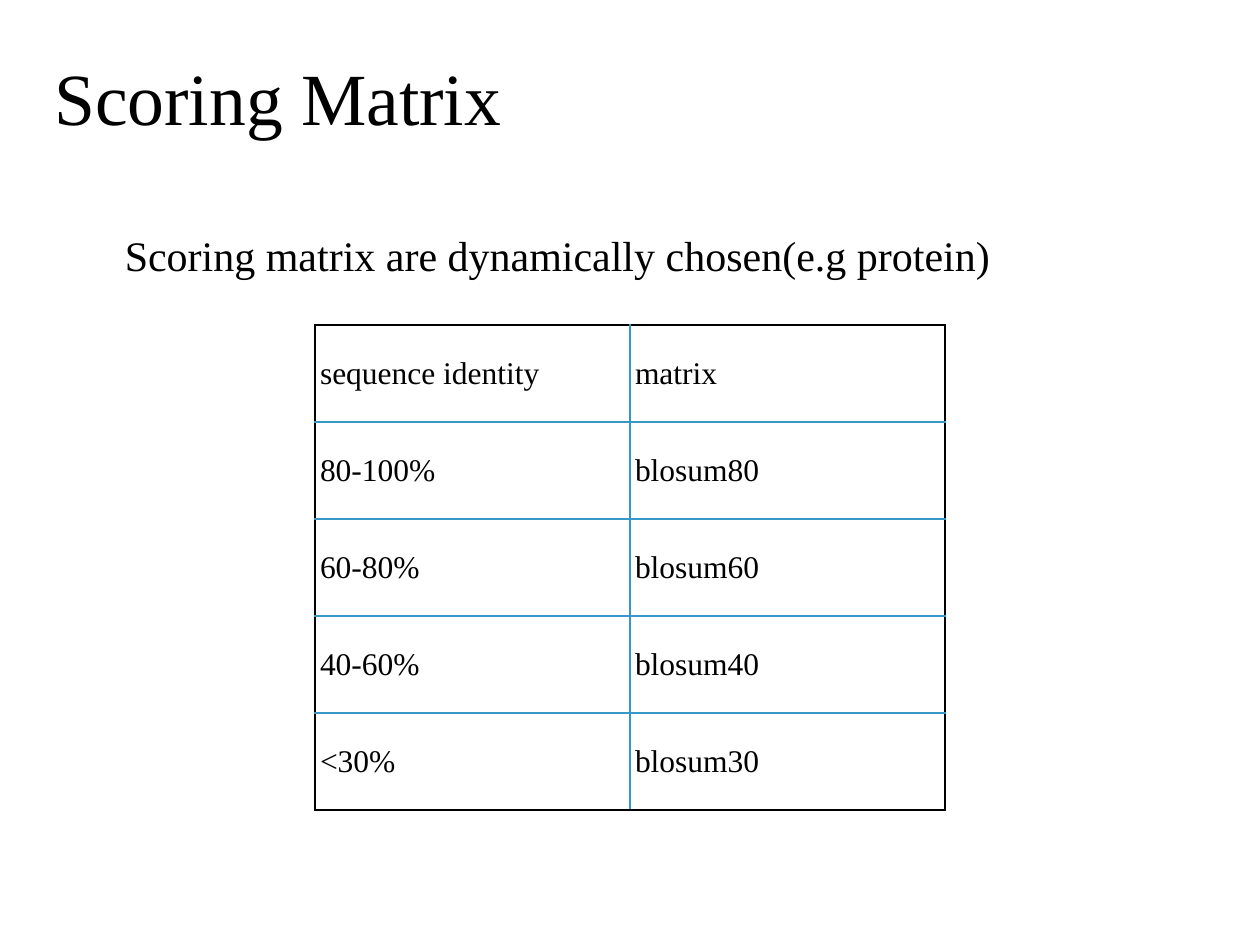
from lxml import etree
from pptx import Presentation
from pptx.dml.color import RGBColor
from pptx.enum.text import MSO_ANCHOR, MSO_AUTO_SIZE, PP_ALIGN
from pptx.oxml.ns import qn
from pptx.util import Inches, Pt

LEFT = PP_ALIGN.LEFT
MIDDLE = MSO_ANCHOR.MIDDLE
NO_AUTOFIT = MSO_AUTO_SIZE.NONE

BLACK = RGBColor(0x00, 0x00, 0x00)
BLUE = RGBColor(0x37, 0x97, 0xC6)
FONT = "Times New Roman"
MARGIN = Inches(0.04)

ROWS = [
    ("sequence identity", "matrix"),
    ("80-100%", "blosum80"),
    ("60-80%", "blosum60"),
    ("40-60%", "blosum40"),
    ("<30%", "blosum30"),
]


def format_paragraph(paragraph, size):
    paragraph.alignment = LEFT
    paragraph.font.name = FONT
    paragraph.font.size = Pt(size)
    paragraph.font.color.rgb = BLACK


def set_margins(target):
    target.margin_left = target.margin_right = MARGIN
    target.margin_top = target.margin_bottom = MARGIN


def fill_placeholder(shape, text, size, left, top, width, height):
    shape.left, shape.top = Inches(left), Inches(top)
    shape.width, shape.height = Inches(width), Inches(height)
    frame = shape.text_frame
    frame.text = text
    frame.word_wrap = False
    frame.auto_size = NO_AUTOFIT
    frame.vertical_anchor = MIDDLE
    set_margins(frame)
    paragraph = frame.paragraphs[0]
    format_paragraph(paragraph, size)
    paragraph.space_before = Pt(0)
    return paragraph


def remove_bullet(paragraph):
    properties = paragraph._p.get_or_add_pPr()
    properties.set("marL", "0")
    properties.set("indent", "0")
    etree.SubElement(properties, qn("a:buNone"))


def add_border(cell, side, color):
    line = etree.SubElement(cell._tc.get_or_add_tcPr(), qn(f"a:ln{side}"), w=str(Pt(1)))
    fill = etree.SubElement(line, qn("a:solidFill"))
    etree.SubElement(fill, qn("a:srgbClr"), val=str(color))


def add_matrix_table(slide, left, top, width, height):
    row_count, column_count = len(ROWS), len(ROWS[0])
    table = slide.shapes.add_table(
        row_count, column_count, Inches(left), Inches(top), Inches(width), Inches(height)
    ).table
    table.first_row = table.horz_banding = False
    for i, values in enumerate(ROWS):
        for j, value in enumerate(values):
            cell = table.cell(i, j)
            cell.text = value
            cell.vertical_anchor = MIDDLE
            set_margins(cell)
            format_paragraph(cell.text_frame.paragraphs[0], 18)
            # Black outer frame, blue inner grid
            outer_sides = {
                "L": j == 0,
                "R": j == column_count - 1,
                "T": i == 0,
                "B": i == row_count - 1,
            }
            for side, is_outer in outer_sides.items():
                add_border(cell, side, BLACK if is_outer else BLUE)
            cell.fill.background()


def main():
    presentation = Presentation()
    presentation.slide_width = Inches(10)
    presentation.slide_height = Inches(7.5)
    slide = presentation.slides.add_slide(presentation.slide_layouts[1])

    # Title and statement
    fill_placeholder(slide.shapes.title, "Scoring Matrix", 42, 0.39, 0.37, 3.66, 0.79)
    statement = fill_placeholder(
        slide.placeholders[1],
        "Scoring matrix are dynamically chosen(e.g protein)",
        24, 0.95, 1.78, 7.01, 0.48,
    )
    remove_bullet(statement)

    # Matrix chosen for each identity range
    add_matrix_table(slide, 2.5, 2.58, 5, 3.85)

    presentation.save("out.pptx")


if __name__ == "__main__":
    main()
